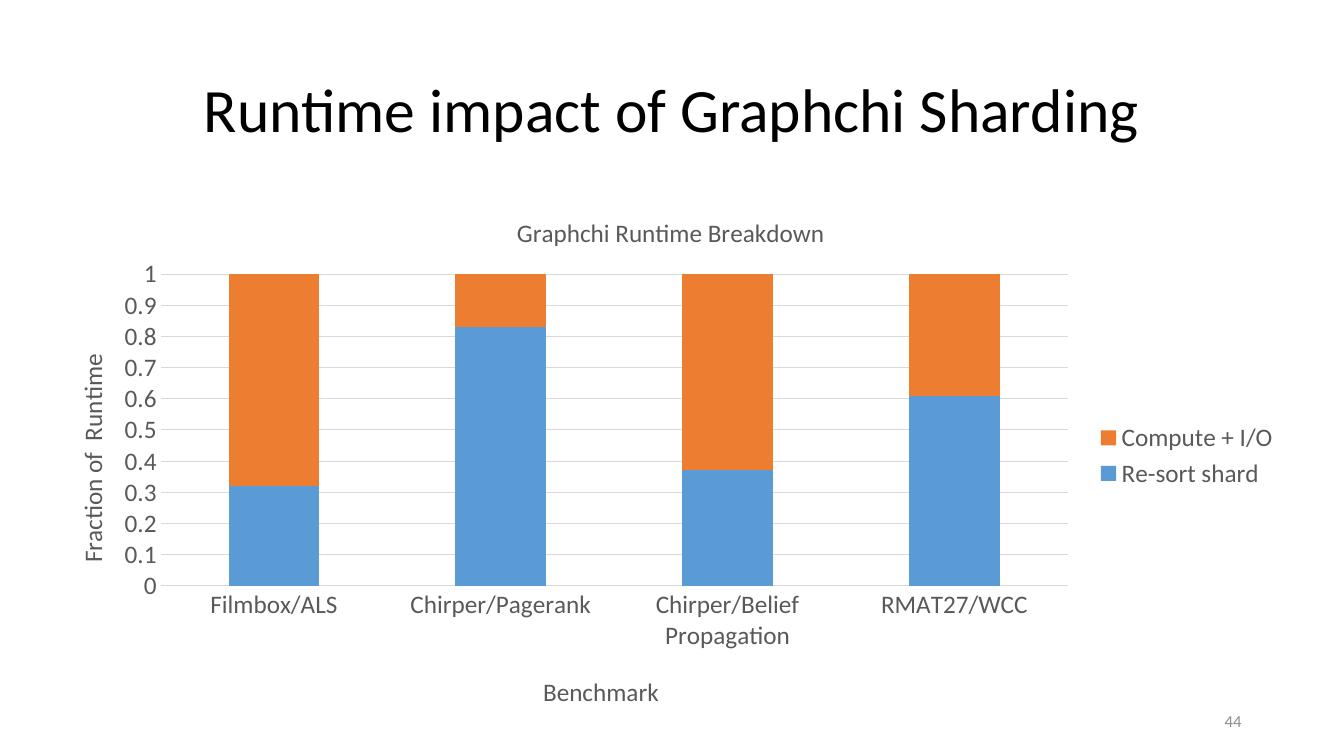
from dataclasses import dataclass
from typing import Any

from lxml.etree import SubElement
from pptx import Presentation
from pptx.chart.data import CategoryChartData
from pptx.dml.color import RGBColor
from pptx.enum.chart import XL_CHART_TYPE, XL_LEGEND_POSITION, XL_TICK_MARK
from pptx.enum.text import MSO_ANCHOR, PP_ALIGN
from pptx.oxml.ns import qn
from pptx.util import Emu, Pt

EMU_PER_PX = 9525


def px(length: int) -> Emu:
    return Emu(length * EMU_PER_PX)


@dataclass(frozen=True)
class Theme:
    font: str = "Calibri"
    ink: str = "000000"
    chart_ink: str = "595959"
    muted: str = "8C8C8C"
    grid: str = "D9D9D9"
    heading_size: int = 44
    chart_size: int = 18
    number_size: int = 12
    hairline: float = 0.75


@dataclass(frozen=True)
class Frame:
    left: int
    top: int
    width: int = 0
    height: int = 0

    def emu(self) -> tuple[Emu, Emu, Emu, Emu]:
        return px(self.left), px(self.top), px(self.width), px(self.height)


@dataclass(frozen=True)
class Label:
    text: str
    frame: Frame
    size: int
    color: str
    align: PP_ALIGN
    line_spacing: float = 1.0


@dataclass(frozen=True)
class RuntimePart:
    name: str
    fractions: tuple[float, ...]
    color: str


@dataclass(frozen=True)
class ChartCaption:
    text: str
    frame: Frame
    rotation: int = 0


THEME = Theme()
CHART_FRAME = Frame(40, 178, 1188, 512)
PLOT_FRAME = Frame(153, 261, 864, 297)
BENCHMARKS = ("Filmbox/ALS", "Chirper/Pagerank", "Chirper/Belief Propagation", "RMAT27/WCC")
RUNTIME_PARTS = (
    RuntimePart("Re-sort shard", (0.32, 0.83, 0.37, 0.61), "5B9BD5"),
    RuntimePart("Compute + I/O", (0.68, 0.17, 0.63, 0.39), "ED7D31"),
)
LABELS = (
    Label("Runtime impact of Graphchi Sharding", Frame(88, 38, 1104, 139),
          THEME.heading_size, THEME.ink, PP_ALIGN.CENTER, 0.9),
    Label("44", Frame(904, 667, 288, 38), THEME.number_size, THEME.muted, PP_ALIGN.RIGHT),
)
BREAKDOWN_CAPTION = ChartCaption("Graphchi Runtime Breakdown", Frame(488, 201))
BENCHMARK_CAPTION = ChartCaption("Benchmark", Frame(513, 638))
FRACTION_CAPTION = ChartCaption("Fraction of  Runtime", Frame(67, 333), -5400000)


def style_font(font: Any, size: int, color: str) -> None:
    font.name = THEME.font
    font.size = Pt(size)
    font.bold = False
    font.color.rgb = RGBColor.from_string(color)


def style_line(line: Any) -> None:
    line.color.rgb = RGBColor.from_string(THEME.grid)
    line.width = Pt(THEME.hairline)


def add_label(slide: Any, label: Label) -> None:
    text_frame = slide.shapes.add_textbox(*label.frame.emu()).text_frame
    text_frame.word_wrap = True
    text_frame.vertical_anchor = MSO_ANCHOR.MIDDLE
    paragraph = text_frame.paragraphs[0]
    paragraph.alignment = label.align
    paragraph.line_spacing = label.line_spacing
    run = paragraph.add_run()
    run.text = label.text
    style_font(run.font, label.size, label.color)


def place_in_chart(element: Any, frame: Frame, position: int) -> None:
    for previous in element.findall(qn("c:layout")):
        element.remove(previous)
    layout = SubElement(element, qn("c:layout"))
    manual = SubElement(layout, qn("c:manualLayout"))
    settings: dict[str, str] = {}
    if frame.width:
        settings["layoutTarget"] = "inner"
    settings |= {
        "xMode": "edge",
        "yMode": "edge",
        "x": f"{(frame.left - CHART_FRAME.left) / CHART_FRAME.width:.4f}",
        "y": f"{(frame.top - CHART_FRAME.top) / CHART_FRAME.height:.4f}",
    }
    if frame.width:
        settings["w"] = f"{frame.width / CHART_FRAME.width:.4f}"
        settings["h"] = f"{frame.height / CHART_FRAME.height:.4f}"
    for tag, value in settings.items():
        SubElement(manual, qn(f"c:{tag}")).set("val", value)
    element.insert(position, layout)


def write_caption(title: Any, caption: ChartCaption) -> None:
    text_frame = title.text_frame
    run = text_frame.paragraphs[0].add_run()
    run.text = caption.text
    style_font(run.font, THEME.chart_size, THEME.chart_ink)
    text_frame._txBody.find(qn("a:bodyPr")).set("rot", str(caption.rotation))
    place_in_chart(title._element, caption.frame, 1)


def style_axis(axis: Any, caption: ChartCaption) -> None:
    axis.major_tick_mark = XL_TICK_MARK.NONE
    axis.minor_tick_mark = XL_TICK_MARK.NONE
    style_font(axis.tick_labels.font, THEME.chart_size, THEME.chart_ink)
    write_caption(axis.axis_title, caption)


def add_runtime_chart(slide: Any) -> None:
    data = CategoryChartData()
    data.categories = BENCHMARKS
    for part in RUNTIME_PARTS:
        data.add_series(part.name, part.fractions)
    chart = slide.shapes.add_chart(
        XL_CHART_TYPE.COLUMN_STACKED, *CHART_FRAME.emu(), data
    ).chart
    style_font(chart.font, THEME.chart_size, THEME.chart_ink)
    write_caption(chart.chart_title, BREAKDOWN_CAPTION)

    plot = chart.plots[0]
    plot.vary_by_categories = False
    plot.gap_width = 150
    plot.overlap = 100
    for series, part in zip(plot.series, RUNTIME_PARTS):
        series.format.fill.solid()
        series.format.fill.fore_color.rgb = RGBColor.from_string(part.color)
        series.format.line.fill.background()

    style_axis(chart.category_axis, BENCHMARK_CAPTION)
    style_line(chart.category_axis.format.line)
    fraction_axis = chart.value_axis
    style_axis(fraction_axis, FRACTION_CAPTION)
    fraction_axis.minimum_scale = 0
    fraction_axis.maximum_scale = 1
    fraction_axis.major_unit = 0.1
    fraction_axis.format.line.fill.background()
    style_line(fraction_axis.major_gridlines.format.line)

    chart.has_legend = True
    chart.legend.position = XL_LEGEND_POSITION.RIGHT
    chart.legend.include_in_layout = False
    style_font(chart.legend.font, THEME.chart_size, THEME.chart_ink)
    place_in_chart(chart._chartSpace.chart.plotArea, PLOT_FRAME, 0)


def main() -> None:
    presentation = Presentation()
    presentation.slide_width = px(1280)
    presentation.slide_height = px(720)
    slide = presentation.slides.add_slide(presentation.slide_layouts[6])
    heading, slide_number = LABELS
    add_label(slide, heading)
    add_runtime_chart(slide)
    add_label(slide, slide_number)
    presentation.save("out.pptx")


if __name__ == "__main__":
    main()
